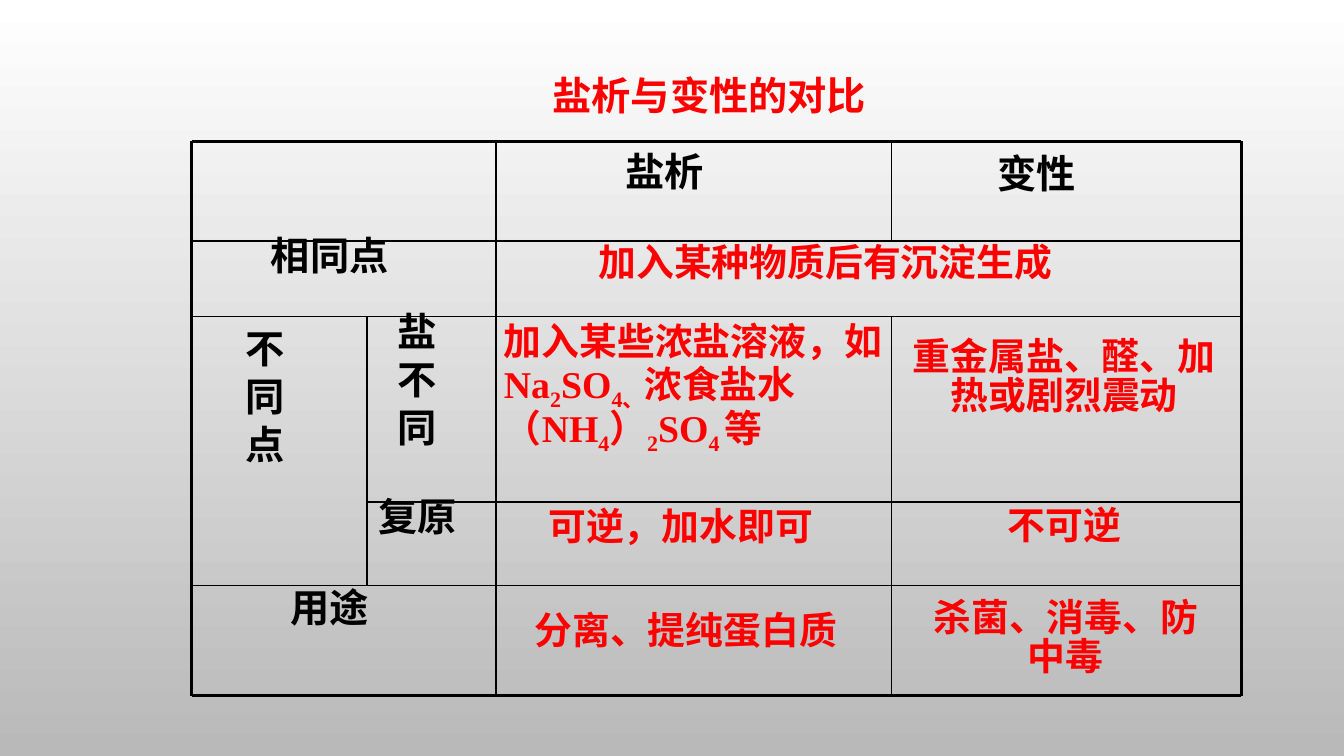
from dataclasses import dataclass

from lxml import etree
from pptx import Presentation
from pptx.dml.color import RGBColor
from pptx.enum.shapes import MSO_CONNECTOR
from pptx.enum.text import MSO_ANCHOR, PP_ALIGN
from pptx.oxml.ns import qn
from pptx.util import Inches, Pt

STRAIGHT = MSO_CONNECTOR.STRAIGHT
CENTER, LEFT = PP_ALIGN.CENTER, PP_ALIGN.LEFT
TOP, MIDDLE = MSO_ANCHOR.TOP, MSO_ANCHOR.MIDDLE
FONT = "Times New Roman"
RED, BLACK = "FF0000", "000000"
OUTER_LINE, INNER_LINE = 2.25, 1

# Grid edges, left to right and top to bottom
X0, X1, X2, X3, X4 = 1.9, 3.64, 4.92, 8.84, 12.31
Y0, Y1, Y2, Y3, Y4, Y5 = 1.4, 2.39, 3.14, 4.98, 5.81, 6.9


@dataclass
class Rule:
    x1: float
    y1: float
    x2: float
    y2: float
    width: float = INNER_LINE


@dataclass
class Entry:
    text: str
    left: float
    top: float
    width: float
    height: float
    size: float = 27
    color: str = RED
    align: PP_ALIGN = CENTER
    anchor: MSO_ANCHOR = TOP
    spacing: float = 0.85


@dataclass
class Label(Entry):
    size: float = 28
    color: str = BLACK


RULES = [
    Rule(X0, Y0, X0, Y5, OUTER_LINE),
    Rule(X4, Y0, X4, Y5, OUTER_LINE),
    Rule(X0, Y0, X4, Y0, OUTER_LINE),
    Rule(X0, Y5, X4, Y5, OUTER_LINE),
    Rule(X0, Y1, X4, Y1),
    Rule(X0, Y2, X4, Y2),
    Rule(X1, Y3, X4, Y3),
    Rule(X0, Y4, X4, Y4),
    Rule(X1, Y2, X1, Y4),
    Rule(X2, Y0, X2, Y5),
    Rule(X3, Y0, X3, Y1),
    Rule(X3, Y2, X3, Y5),
]

ENTRIES = [
    Entry("加入某种物质后有沉淀生成", 4.49, 2.39, 7.39, 0.75),
    Entry("不可逆", 8.82, 5, 3.47, 0.83),
    Entry("可逆，加水即可", 4.79, 5.01, 3.92, 0.83),
    Entry("杀菌、消毒、防中毒", 9.09, 5.91, 2.96, 1.1),
    Entry("分离、提纯蛋白质", 4.84, 6.04, 3.92, 0.68),
    Entry("重金属盐、醛、加热或剧烈震动", 8.82, 3.32, 3.47, 1.25),
    Entry("加入某些浓盐溶液，如 Na_2_SO_4、_浓食盐水（NH_4_）_2_SO_4 _等",
          4.9, 3.17, 4, 1.84, align=LEFT),
    Label("相同点", 1.76, 2.32, 3.02, 0.75),
    Label("复原", 3.5, 4.91, 1.28, 0.83),
    Label("盐\n不\n同", 3.5, 3.07, 1.28, 1.84),
    Label("用途", 1.76, 5.81, 3.02, 1.1),
    Label("不\n同\n点", 1.76, 3.24, 1.74, 2.67),
    Label("变性", 8.55, 1.5, 3.47, 0.99),
    Label("盐析", 4.63, 1.48, 3.92, 0.99),
    Label("盐析与变性的对比", 2.19, 0.65, 9.69, 0.59,
          color=RED, anchor=MIDDLE, spacing=1.0),
]


def rgb(value: str) -> RGBColor:
    return RGBColor.from_string(value)


def write_text(frame, text: str, *, size: float, color: str, align: PP_ALIGN,
               anchor: MSO_ANCHOR, spacing: float) -> None:
    """Write one paragraph per line; parts between underscores are subscripts."""
    frame.word_wrap = True
    frame.vertical_anchor = anchor
    for index, line in enumerate(text.split("\n")):
        para = frame.add_paragraph() if index else frame.paragraphs[0]
        para.alignment = align
        para.line_spacing = spacing
        if index:
            para.space_before = Pt(size * 0.2)
        for position, part in enumerate(line.split("_")):
            span = para.add_run()
            span.text = part
            span.font.name = FONT
            span.font.size = Pt(size)
            span.font.bold = True
            span.font.color.rgb = rgb(color)
            if position % 2:
                span.font._element.set("baseline", "-25000")


def add_entry(page, entry: Entry) -> None:
    box = page.shapes.add_textbox(Inches(entry.left), Inches(entry.top),
                                  Inches(entry.width), Inches(entry.height))
    write_text(box.text_frame, entry.text, size=entry.size, color=entry.color,
               align=entry.align, anchor=entry.anchor, spacing=entry.spacing)


def add_rule(page, rule: Rule) -> None:
    line = page.shapes.add_connector(STRAIGHT, Inches(rule.x1), Inches(rule.y1),
                                     Inches(rule.x2), Inches(rule.y2))
    line.line.width = Pt(rule.width)
    line.line.color.rgb = rgb(BLACK)
    etree.SubElement(line._element.spPr, qn("a:effectLst"))


def paint_background(page) -> None:
    fill = page.background.fill
    fill.gradient()
    fill.gradient_angle = 270
    for stop, color in zip(fill.gradient_stops, ("FFFFFF", "B9B9B9")):
        stop.color.rgb = rgb(color)


def main() -> None:
    deck = Presentation()
    deck.slide_width, deck.slide_height = Inches(13.33), Inches(7.5)
    page = deck.slides.add_slide(deck.slide_layouts[6])
    paint_background(page)
    for rule in RULES:
        add_rule(page, rule)
    for entry in ENTRIES:
        add_entry(page, entry)
    deck.save("out.pptx")


if __name__ == "__main__":
    main()
